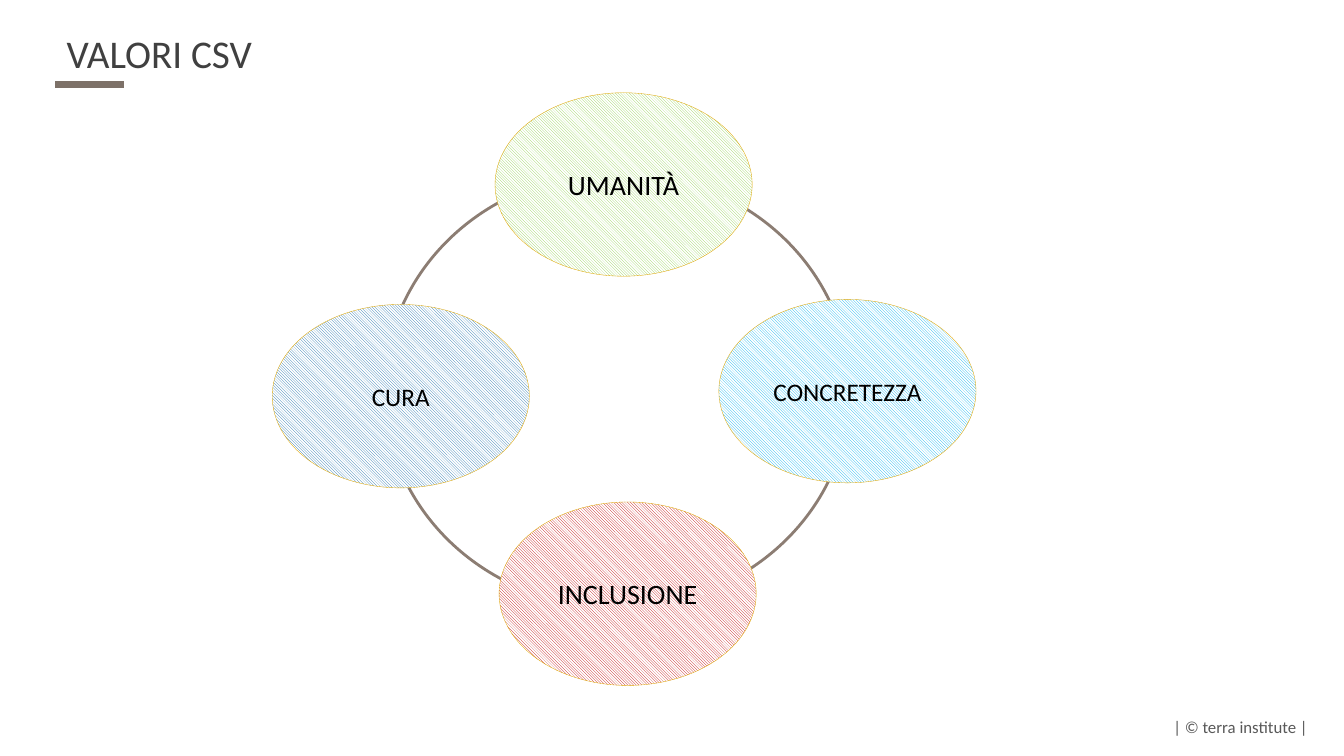
import pptx
import pptx.util
import pptx.dml.color
import pptx.enum.dml
import pptx.enum.shapes
import pptx.enum.text
import lxml.etree

Inches, Pt = pptx.util.Inches, pptx.util.Pt
ALIGN = pptx.enum.text.PP_ALIGN
ANCHOR = pptx.enum.text.MSO_ANCHOR
OVAL = pptx.enum.shapes.MSO_SHAPE.OVAL

# Content
TITLE = "VALORI CSV"
FOOTER = "| © terra institute |"
VALUES = [  # text, left, top, pattern colour, text size
    ("CONCRETEZZA", 7.13, 2.97, "00B0F0", 18),
    ("CURA", 2.7, 3.02, "1B6EAC", 18),
    ("UMANITÀ", 4.91, 0.92, "92D050", 20),
    ("INCLUSIONE", 4.95, 4.98, "C00000", 20),
]
VALUE_SIZE = (2.55, 1.82)
RING = (3.81, 1.71, 4.62, 4.32)


def color(value):
    return pptx.dml.color.RGBColor.from_string(value)


def write(shape, text, align, anchor, size, ink, **frame):
    tf = shape.text_frame
    settings = {"word_wrap": True, "vertical_anchor": anchor, **frame}
    for name, value in settings.items():
        setattr(tf, name, value)
    p = tf.paragraphs[0]
    p.alignment = align
    r = p.add_run()
    r.text = text
    for name, value in {"name": "Calibri", "size": Pt(size)}.items():
        setattr(r.font, name, value)
    r.font.color.rgb = color(ink)


def outline(shape, ink, width):
    shape.line.color.rgb = color(ink)
    shape.line.width = Pt(width)


def add_oval(box, ink, width):
    sp = s.shapes.add_shape(OVAL, *map(Inches, box))
    sp.shadow.inherit = False
    outline(sp, ink, width)
    return sp


prs = pptx.Presentation()
prs.slide_width, prs.slide_height = Inches(13.33), Inches(7.5)
s = prs.slides.add_slide(prs.slide_layouts[6])

# Footer
footer = s.shapes.add_textbox(*map(Inches, (10.76, 7.06, 2.31, 0.3)))
write(footer, FOOTER, ALIGN.RIGHT, ANCHOR.TOP, 12, "595959")

# Title with its accent rule
rule = s.shapes.add_connector(
    pptx.enum.shapes.MSO_CONNECTOR.STRAIGHT,
    *map(Inches, (0.55, 0.84, 1.23, 0.84)))
outline(rule, "7D7168", 4.5)
lxml.etree.SubElement(rule._element.spPr, pptx.oxml.ns.qn("a:effectLst"))
title = s.shapes.add_textbox(*map(Inches, (0.47, 0.21, 9.45, 0.63)))
write(title, TITLE, ALIGN.LEFT, ANCHOR.MIDDLE, 28, "404040",
      margin_left=Inches(0.19))

# Ring behind the values
ring = add_oval(RING, "8C7D73", 2)
ring.fill.background()

# Value ovals
for text, left, top, tint, size in VALUES:
    oval = add_oval((left, top, *VALUE_SIZE), "E0A807", 0.25)
    oval.fill.patterned()
    oval.fill.pattern = pptx.enum.dml.MSO_PATTERN.LIGHT_DOWNWARD_DIAGONAL
    oval.fill.fore_color.rgb = color(tint)
    oval.fill.back_color.rgb = color("FFFFFF")
    write(oval, text, ALIGN.CENTER, ANCHOR.MIDDLE, size, "000000")

prs.save("out.pptx")
